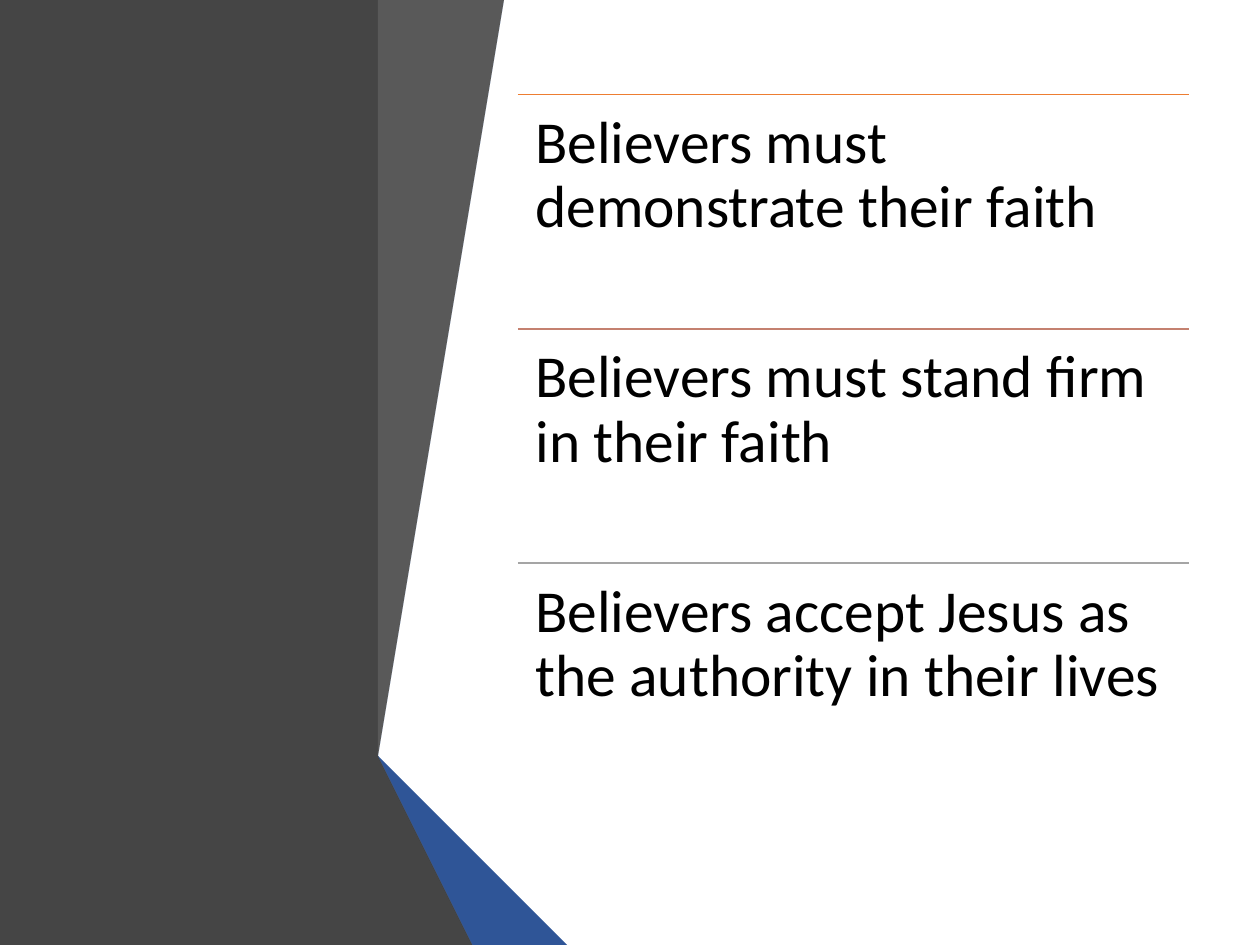
"""Build a slide of three statements about believers beside a folded ribbon."""
from dataclasses import dataclass

import lxml.etree
import pptx
import pptx.dml.color
import pptx.enum.text
import pptx.oxml.ns
import pptx.presentation
import pptx.slide
import pptx.util
from pptx.util import Inches

Point = tuple[float, float]


@dataclass(frozen=True)
class Theme:
    font: str = "Calibri"
    statement_size: int = 34
    rule_width: int = 1
    text: str = "000000"
    panel: str = "454545"
    blue: str = "4472C4"
    blue_fold: str = "2F5597"
    blue_edge: str = "203864"
    grey: str = "595959"
    grey_fold: str = "404040"
    grey_edge: str = "262626"
    orange_rule: str = "ED7D31"
    rose_rule: str = "C48170"
    silver_rule: str = "A5A5A5"


@dataclass(frozen=True)
class Facet:
    color: str
    corners: tuple[Point, ...]


@dataclass(frozen=True)
class Statement:
    wording: str
    rule_color: str


THEME = Theme()
SLIDE_WIDTH, SLIDE_HEIGHT = 10, 7.5
STATEMENT_LEFT, STATEMENT_TOP = 4.11, 0.75
STATEMENT_WIDTH, STATEMENT_HEIGHT = 5.33, 1.86
STATEMENT_INSET = 0.14

FACETS = (
    Facet(THEME.panel, ((0, 0), (3.36, 0), (2.67, 5.75), (3.61, 7.5), (0, 7.5))),
    Facet(THEME.blue, ((2.97, 5.78), (3.17, 5.83), (3.89, 0), (3.68, 0))),
    Facet(THEME.grey, ((3.64, 0), (3.43, 0), (2.72, 5.73), (2.92, 5.77))),
    Facet(THEME.grey_edge, ((2.72, 5.73), (3.68, 7.5), (3.73, 7.5))),
    Facet(THEME.blue_edge, ((2.97, 5.79), (4.15, 7.5), (4.2, 7.5))),
    Facet(THEME.blue_fold, ((2.97, 5.78), (2.97, 5.79), (4.2, 7.5), (4.72, 7.5), (3.17, 5.83))),
    Facet(THEME.grey_fold, ((2.72, 5.73), (3.73, 7.5), (4.11, 7.5), (2.96, 5.83), (2.92, 5.77))),
)

STATEMENTS = (
    Statement("Believers must demonstrate their faith", THEME.orange_rule),
    Statement("Believers must stand firm in their faith", THEME.rose_rule),
    Statement("Believers accept Jesus as the authority in their lives", THEME.silver_rule),
)


def rgb(color: str) -> pptx.dml.color.RGBColor:
    """Return the colour for a hexadecimal string."""
    return pptx.dml.color.RGBColor.from_string(color)


def draw_facet(slide: pptx.slide.Slide, facet: Facet) -> None:
    """Draw one filled outline of the panel and ribbon."""
    start, *rest = facet.corners
    builder = slide.shapes.build_freeform(*start, scale=float(Inches(1)))
    builder.add_line_segments(rest, close=True)
    outline = builder.convert_to_shape()
    outline.shadow.inherit = False
    outline.fill.solid()
    outline.fill.fore_color.rgb = rgb(facet.color)
    outline.line.fill.background()


def draw_rule(slide: pptx.slide.Slide, top: float, color: str) -> None:
    """Draw the thin line above a statement."""
    rule = slide.shapes.add_connector(
        pptx.enum.shapes.MSO_CONNECTOR.STRAIGHT,
        Inches(STATEMENT_LEFT), Inches(top),
        Inches(STATEMENT_LEFT + STATEMENT_WIDTH), Inches(top),
    )
    rule.line.color.rgb = rgb(color)
    rule.line.width = pptx.util.Pt(THEME.rule_width)
    properties = rule._element.spPr
    lxml.etree.SubElement(properties, pptx.oxml.ns.qn("a:effectLst"))


def draw_statement(slide: pptx.slide.Slide, top: float, statement: Statement) -> None:
    """Draw a statement under its rule."""
    draw_rule(slide, top, statement.rule_color)
    frame = slide.shapes.add_textbox(
        Inches(STATEMENT_LEFT), Inches(top),
        Inches(STATEMENT_WIDTH), Inches(STATEMENT_HEIGHT),
    ).text_frame
    frame.word_wrap = True
    frame.vertical_anchor = pptx.enum.text.MSO_ANCHOR.TOP
    frame.margin_left = frame.margin_right = Inches(STATEMENT_INSET)
    frame.margin_top = frame.margin_bottom = Inches(STATEMENT_INSET)
    paragraph = frame.paragraphs[0]
    paragraph.text = statement.wording
    paragraph.line_spacing = 0.9
    paragraph.font.name = THEME.font
    paragraph.font.size = pptx.util.Pt(THEME.statement_size)
    paragraph.font.color.rgb = rgb(THEME.text)


def build_presentation() -> pptx.presentation.Presentation:
    """Compose the slide from its facets and statements."""
    presentation = pptx.Presentation()
    presentation.slide_width = Inches(SLIDE_WIDTH)
    presentation.slide_height = Inches(SLIDE_HEIGHT)
    blank_layout = presentation.slide_layouts.get_by_name("Blank")
    slide = presentation.slides.add_slide(blank_layout)
    for facet in FACETS:
        draw_facet(slide, facet)
    for row, statement in enumerate(STATEMENTS):
        draw_statement(slide, STATEMENT_TOP + row * STATEMENT_HEIGHT, statement)
    return presentation


def main() -> None:
    """Save the finished presentation."""
    build_presentation().save("out.pptx")


if __name__ == "__main__":
    main()
